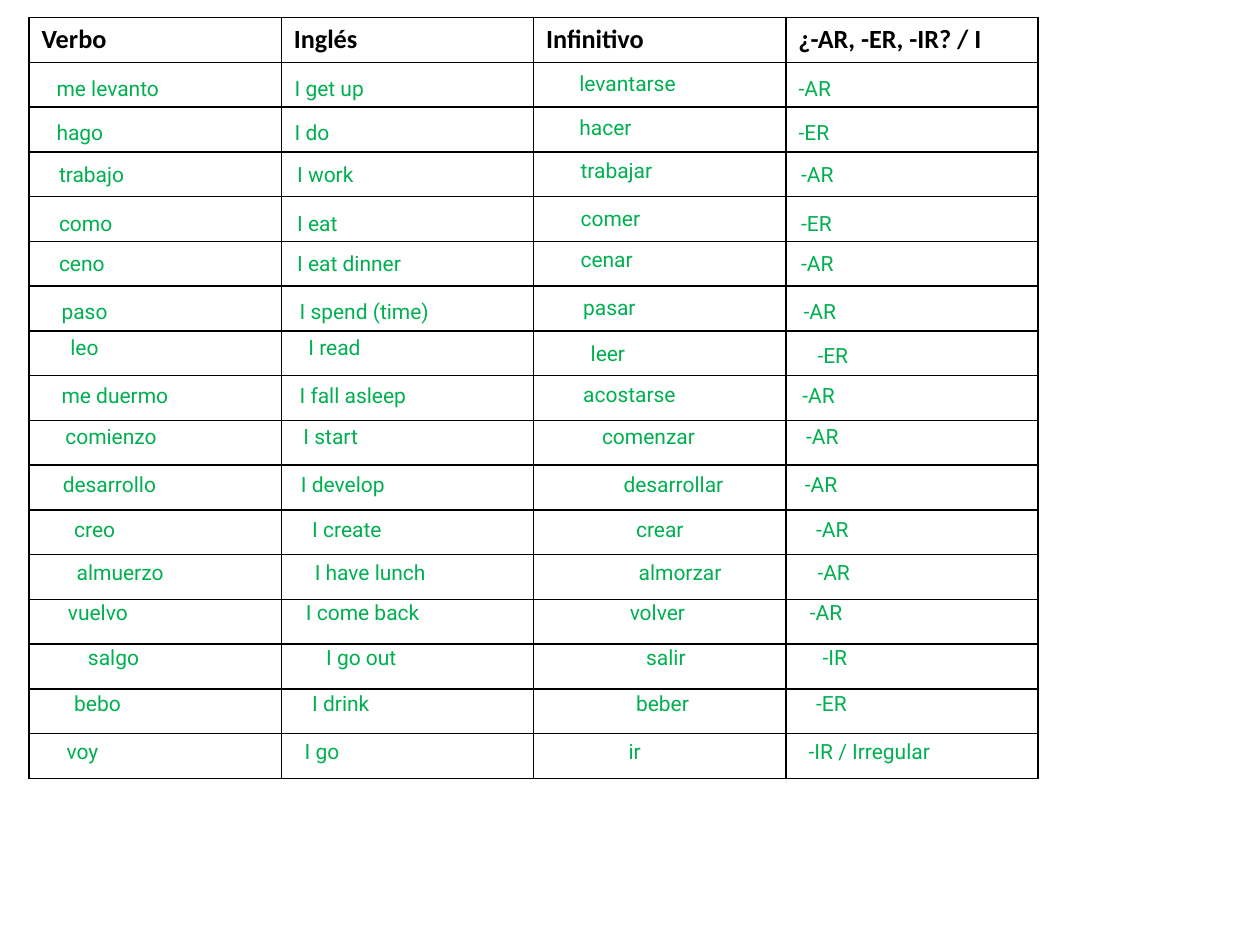
from lxml.etree import SubElement
from pptx import Presentation
from pptx.dml.color import RGBColor
from pptx.enum.text import MSO_AUTO_SIZE
from pptx.oxml.ns import qn
from pptx.util import Inches, Pt

BLACK = "000000"
GREEN = "00B050"
COLUMN_WIDTH = 2
ANSWER_HEIGHT = 0.3
ENGLISH_OFFSET = -0.11  # indent of the English word compared with the verb

HEADERS = ("Verbo", "Inglés", "Infinitivo", "¿-AR, -ER, -IR? / I")

# Top in the table, verb indent, infinitive (indent, shift down),
# ending (indent, shift down), box widths, words
ANSWERS = [
    (0.41, 0.12, (0.27, -0.04), (0.01, 0), (1.21, 0.86, 1.06, 0.56),
     ("me levanto", "I get up", "levantarse", "-AR")),
    (0.76, 0.12, (0.27, -0.04), (0.01, 0), (1.21, 0.53, 0.66, 0.55),
     ("hago", "I do", "hacer", "-ER")),
    (1.09, 0.14, (0.28, -0.03), (0.03, 0), (0.81, 2.22, 0.9, 0.56),
     ("trabajo", "I work", "trabajar", "-AR")),
    (1.48, 0.14, (0.28, -0.04), (0.03, 0), (0.65, 1.21, 0.73, 0.55),
     ("como", "I eat", "comer", "-ER")),
    (1.8, 0.14, (0.28, -0.03), (0.03, 0), (0.58, 1.21, 0.67, 0.56),
     ("ceno", "I eat dinner", "cenar", "-AR")),
    (2.18, 0.16, (0.3, -0.03), (0.05, 0), (0.58, 2.22, 0.66, 0.56),
     ("paso", "I spend (time)", "pasar", "-AR")),
    (2.47, 0.23, (0.36, 0.04), (0.16, 0.06), (0.48, 1.5, 0.63, 0.55),
     ("leo", "I read", "leer", "-ER")),
    (2.85, 0.16, (0.3, -0.01), (0.04, 0), (1.3, 2.75, 1.21, 0.7),
     ("me duermo", "I fall asleep", "acostarse", "-AR")),
    (3.17, 0.19, (0.45, 0), (0.07, 0), (1.01, 2.75, 1.03, 0.7),
     ("comienzo", "I start", "comenzar", "-AR")),
    (3.55, 0.17, (0.62, 0), (0.06, 0), (1.26, 1.5, 1.38, 0.7),
     ("desarrollo", "I develop", "desarrollar", "-AR")),
    (3.91, 0.26, (0.72, 0), (0.15, 0), (0.78, 1.5, 0.9, 0.7),
     ("creo", "I create", "crear", "-AR")),
    (4.25, 0.28, (0.74, 0), (0.16, 0), (1.09, 1.5, 1.11, 0.6),
     ("almuerzo", "I have lunch", "almorzar", "-AR")),
    (4.57, 0.21, (0.67, 0), (0.1, 0), (0.71, 2.75, 0.86, 0.6),
     ("vuelvo", "I come back", "volver", "-AR")),
    (4.93, 0.37, (0.8, 0), (0.2, 0), (0.9, 1.5, 0.66, 0.6),
     ("salgo", "I go out", "salir", "-IR")),
    (5.29, 0.26, (0.72, 0), (0.15, 0), (1.55, 1.5, 1.46, 0.7),
     ("bebo", "I drink", "beber", "-ER")),
    (5.67, 0.2, (0.66, 0), (0.09, 0), (0.98, 1.56, 1.5, 1.79),
     ("voy", "I go", "ir", "-IR / Irregular")),
]


def color(hex_string):
    return RGBColor.from_string(hex_string)


def write(text_frame, text, font_name, size, hex_string, bold=False):
    text_frame.text = text
    font = text_frame.paragraphs[0].runs[0].font
    font.name = font_name
    font.size = Pt(size)
    font.bold = bold
    font.color.rgb = color(hex_string)


def add_borders(cell):
    properties = cell._tc.get_or_add_tcPr()
    for side in ("a:lnL", "a:lnR", "a:lnT", "a:lnB"):
        line = SubElement(properties, qn(side), w=str(Pt(1)))
        fill = SubElement(line, qn("a:solidFill"))
        SubElement(fill, qn("a:srgbClr"), val=BLACK)


def add_verb_table(slide, left, top, width, height):
    row_count = len(ANSWERS) + 1
    table = slide.shapes.add_table(
        row_count, len(HEADERS), left, top, width, height).table
    table.first_row = False
    table.horz_banding = False
    for cell in table.iter_cells():
        add_borders(cell)
        cell.fill.background()
        cell.margin_top = cell.margin_bottom = 0
    for cell, header in zip(table.rows[0].cells, HEADERS):
        cell.margin_top = cell.margin_bottom = Inches(0.05)
        write(cell.text_frame, header, "Calibri", 15, BLACK, bold=True)


def add_answer(slide, text, left, top, width):
    shape = slide.shapes.add_textbox(left, top, width, Inches(ANSWER_HEIGHT))
    text_frame = shape.text_frame
    text_frame.word_wrap = True
    text_frame.auto_size = MSO_AUTO_SIZE.SHAPE_TO_FIT_TEXT
    write(text_frame, text, "Roboto", 12, GREEN)


def add_answers(slide, left, top):
    """Lay the answers over the table whose top left corner is given."""
    for row_top, indent, infinitive, ending, widths, words in ANSWERS:
        places = ((indent, 0), (indent + ENGLISH_OFFSET, 0), infinitive, ending)
        for column, (word, width, place) in enumerate(zip(words, widths, places)):
            cell_indent, shift = place
            add_answer(slide, word,
                       left + Inches(column * COLUMN_WIDTH + cell_indent),
                       top + Inches(row_top + shift), Inches(width))


def main():
    presentation = Presentation()
    presentation.slide_width = Inches(10)
    presentation.slide_height = Inches(7.5)
    slide = presentation.slides.add_slide(presentation.slide_layouts[6])
    left, top = Inches(0.23), Inches(0.14)
    add_verb_table(slide, left, top, Inches(8.01), Inches(6.04))
    add_answers(slide, left, top)
    presentation.save("out.pptx")


if __name__ == "__main__":
    main()
